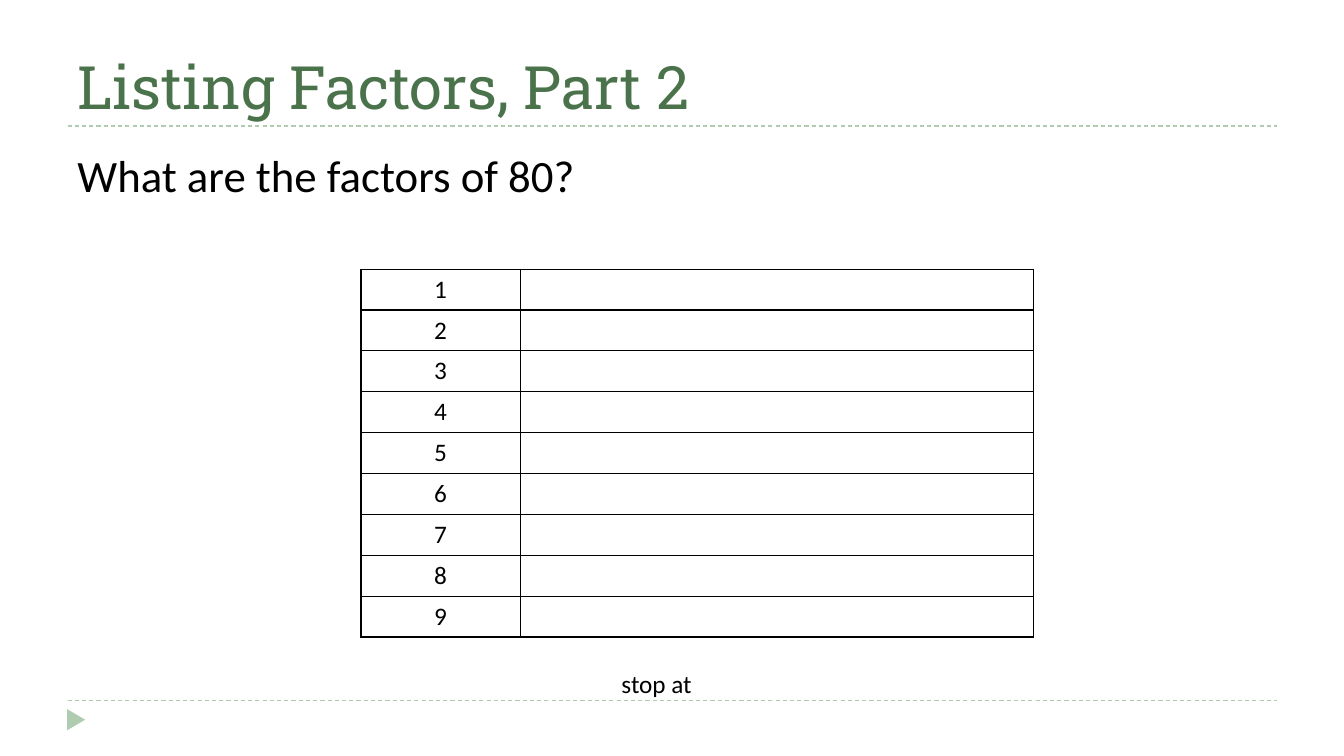
from lxml import etree
from pptx import Presentation
from pptx.dml.color import RGBColor
from pptx.enum.dml import MSO_LINE
from pptx.enum.shapes import MSO_CONNECTOR, MSO_SHAPE
from pptx.enum.text import MSO_ANCHOR, PP_ALIGN
from pptx.oxml.ns import qn
from pptx.util import Inches, Pt

TITLE_GREEN = RGBColor(0x4B, 0x73, 0x4B)
RULE_GREEN = RGBColor(0xB0, 0xCC, 0xB0)
BLACK = RGBColor(0, 0, 0)
WHITE = RGBColor(0xFF, 0xFF, 0xFF)
DASH = MSO_LINE.DASH
STRAIGHT = MSO_CONNECTOR.STRAIGHT
TRIANGLE = MSO_SHAPE.ISOSCELES_TRIANGLE
TOP, BOTTOM = MSO_ANCHOR.TOP, MSO_ANCHOR.BOTTOM
LEFT, CENTER = PP_ALIGN.LEFT, PP_ALIGN.CENTER


def write(frame, text, size=18, font="Calibri", color=BLACK, align=LEFT, anchor=TOP):
    frame.word_wrap = True
    frame.vertical_anchor = anchor
    paragraph = frame.paragraphs[0]
    paragraph.alignment = align
    run = paragraph.add_run()
    run.text = text
    run.font.size = Pt(size)
    run.font.name = font
    run.font.color.rgb = color


def add_text(slide, box, text, **text_format):
    frame = slide.shapes.add_textbox(*map(Inches, box)).text_frame
    write(frame, text, **text_format)


def add_rule(slide, left, top, width):
    rule = slide.shapes.add_connector(
        STRAIGHT, Inches(left), Inches(top), Inches(left + width), Inches(top))
    rule.line.color.rgb = RULE_GREEN
    rule.line.width = Pt(0.75)
    rule.line.dash_style = DASH
    etree.SubElement(rule._element.spPr, qn("a:effectLst"))


def add_header(slide, left, top, width, height):
    add_rule(slide, left, top + height, width)
    add_text(slide, (left, top, width, height), "Listing Factors, Part 2",
             size=42.7, font="Roboto Slab", color=TITLE_GREEN, anchor=BOTTOM)


def add_footer(slide, left, top, width):
    add_rule(slide, left, top, width)
    marker = slide.shapes.add_shape(
        TRIANGLE, Inches(left - 0.02), Inches(top + 0.1), Inches(0.21), Inches(0.18))
    marker.rotation = 90
    marker.shadow.inherit = False
    marker.fill.solid()
    marker.fill.fore_color.rgb = RULE_GREEN
    marker.line.fill.background()


def style_cell(cell):
    properties = cell._tc.get_or_add_tcPr()
    for side in ("lnL", "lnR", "lnT", "lnB"):
        border = etree.SubElement(properties, qn(f"a:{side}"), w=str(Pt(1)))
        fill = etree.SubElement(border, qn("a:solidFill"))
        etree.SubElement(fill, qn("a:srgbClr"), val=str(BLACK))
    cell.fill.solid()
    cell.fill.fore_color.rgb = WHITE
    cell.vertical_anchor = TOP


def add_factor_table(slide, left, top, width, height, factors):
    table = slide.shapes.add_table(
        len(factors), 2, *map(Inches, (left, top, width, height))).table
    factor_width = 1.58
    table.columns[0].width = Inches(factor_width)
    table.columns[1].width = Inches(width - factor_width)
    for row, factor in zip(table.rows, factors):
        row.height = Inches(height / len(factors))
        for cell in row.cells:
            style_cell(cell)
        write(row.cells[0].text_frame, str(factor), align=CENTER)


def add_exercise(slide, left, top):
    add_factor_table(slide, left + 2.91, top + 1.25, 6.67, 3.65, range(1, 10))
    add_text(slide, (left + 1.66, top + 5.16, 8.42, 0.4), "stop at ", align=CENTER)
    add_text(slide, (left, top, 9, 0.67), "What are the factors of 80?", size=32)


def main():
    presentation = Presentation()
    presentation.slide_width = Inches(13.33)
    presentation.slide_height = Inches(7.5)
    slide = presentation.slides.add_slide(presentation.slide_layouts[6])
    slide.background.fill.solid()
    slide.background.fill.fore_color.rgb = WHITE
    margin, content_width = 0.67, 12
    add_footer(slide, margin, 6.95, content_width)
    add_header(slide, margin, 0.17, content_width, 1.08)
    add_exercise(slide, margin, 1.42)
    presentation.save("out.pptx")


if __name__ == "__main__":
    main()
